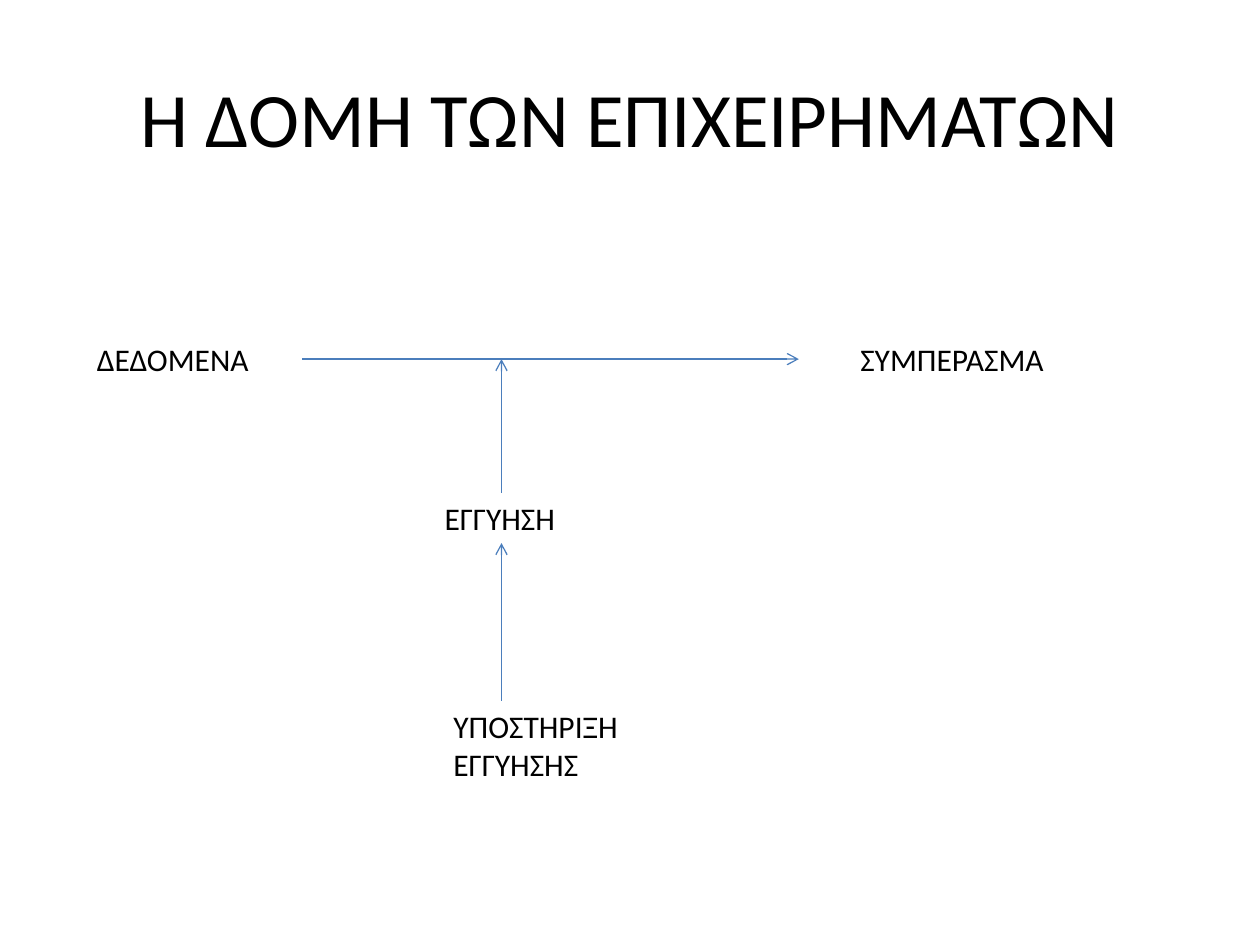
"""Build a slide showing how data, warrant, backing and conclusion form an argument."""
import lxml.etree
import pptx
import pptx.dml.color
import pptx.enum.shapes
import pptx.enum.text
import pptx.oxml.ns
import pptx.util

Inches = pptx.util.Inches
Align = pptx.enum.text.PP_ALIGN
Anchor = pptx.enum.text.MSO_ANCHOR
AutoSize = pptx.enum.text.MSO_AUTO_SIZE
qn = pptx.oxml.ns.qn


def color(hex_string):
    return pptx.dml.color.RGBColor.from_string(hex_string)


deck = pptx.Presentation()
deck.slide_width, deck.slide_height = Inches(10), Inches(7.5)
slide = deck.slides.add_slide(deck.slide_layouts[6])

title_format = {
    "frame": {"word_wrap": True, "vertical_anchor": Anchor.MIDDLE},
    "paragraph": {"alignment": Align.CENTER},
    "font": {"size": pptx.util.Pt(44), "name": "Calibri"},
}
label_format = {
    "frame": {"word_wrap": True, "auto_size": AutoSize.SHAPE_TO_FIT_TEXT},
    "paragraph": {"alignment": Align.LEFT},
    "font": {"size": pptx.util.Pt(18), "name": "Calibri"},
}

claim_y, warrant_x = 2.85, 3.98
warrant_top, warrant_bottom, backing_top = 3.91, 4.31, 5.56
label_height = warrant_bottom - warrant_top
claim_top = claim_y - label_height / 2

wording = [
    ("Η ΔΟΜΗ ΤΩΝ ΕΠΙΧΕΙΡΗΜΑΤΩΝ", (0.5, 0.3, 9, 1.25), title_format),
    ("ΔΕΔΟΜΕΝΑ", (0.67, claim_top, 1.57, label_height), label_format),
    ("ΣΥΜΠΕΡΑΣΜΑ", (6.73, claim_top, 1.73, label_height), label_format),
    ("ΕΓΓΥΗΣΗ", (3.43, warrant_top, 1.97, label_height), label_format),
    ("ΥΠΟΣΤΗΡΙΞΗ ΕΓΓΥΗΣΗΣ", (3.5, backing_top, 2.13, 0.71), label_format),
]
for text, place, text_format in wording:
    frame = slide.shapes.add_textbox(*map(Inches, place)).text_frame
    paragraph = frame.paragraphs[0]
    run = paragraph.add_run()
    run.text = text
    run.font.color.rgb = color("000000")
    targets = {"frame": frame, "paragraph": paragraph, "font": run.font}
    for part, values in text_format.items():
        for attribute, value in values.items():
            setattr(targets[part], attribute, value)

inferences = [
    (2.4, claim_y, 6.34, claim_y),
    (warrant_x, backing_top, warrant_x, warrant_bottom),
    (warrant_x, warrant_top, warrant_x, claim_y),
]
for ends in inferences:
    inference = slide.shapes.add_connector(
        pptx.enum.shapes.MSO_CONNECTOR.STRAIGHT, *map(Inches, ends)
    )
    inference.line.color.rgb = color("4B7EBC")
    inference.line.width = pptx.util.Pt(0.75)
    outline = inference.line._get_or_add_ln()
    lxml.etree.SubElement(outline, qn("a:tailEnd"), type="arrow")
    lxml.etree.SubElement(inference._element.spPr, qn("a:effectLst"))

deck.save("out.pptx")
